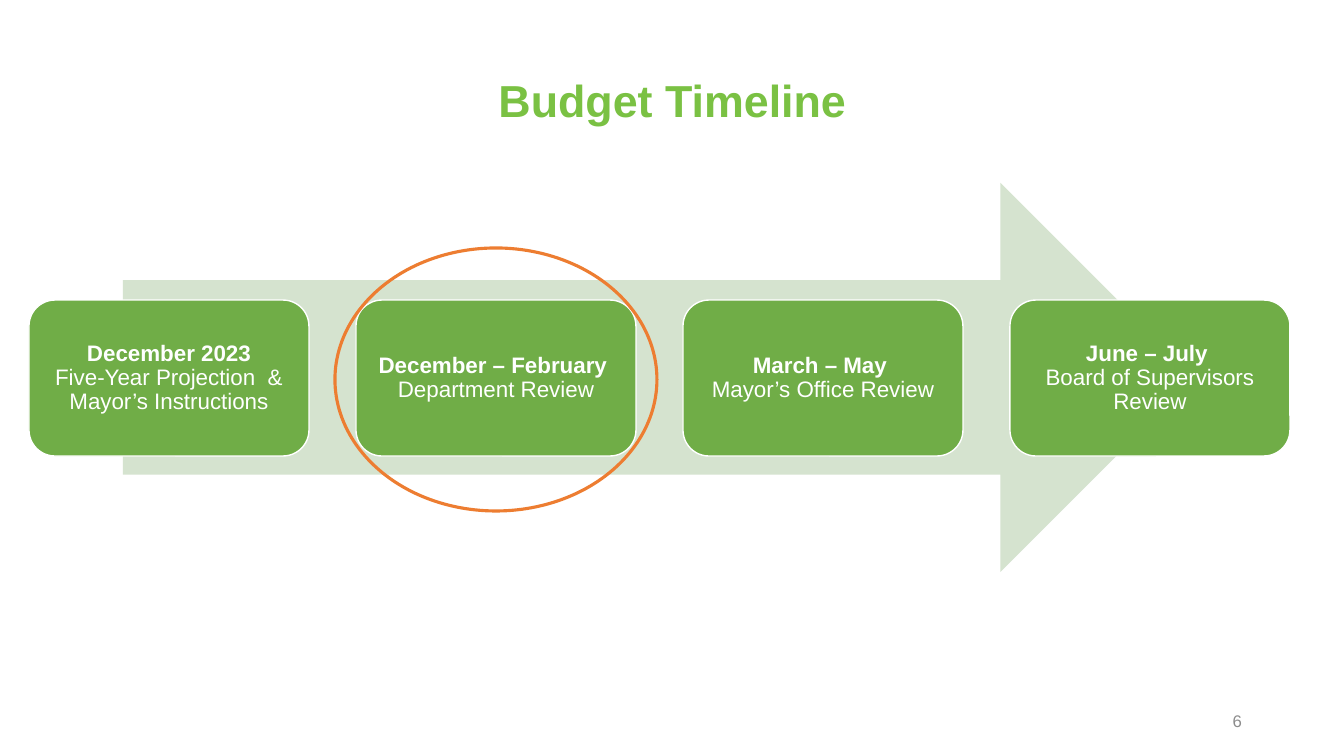
from pptx import Presentation
from pptx import util as u
from pptx.dml.color import RGBColor
from pptx.enum import shapes, text

# Content
TITLE = "Budget Timeline"
PAGE_NUMBER = "6"
STAGES = [
    ("December 2023", "Five-Year Projection  & Mayor’s Instructions"),
    ("December – February ", "Department Review"),
    ("March – May ", "Mayor’s Office Review"),
    ("June – July ", "Board of Supervisors Review"),
]
CURRENT_STAGE = 1

# Colours and font
TITLE_GREEN = RGBColor(0x7A, 0xC1, 0x43)
ARROW_GREEN = RGBColor(0xD5, 0xE3, 0xCF)
STAGE_GREEN = RGBColor(0x70, 0xAD, 0x47)
ORANGE = RGBColor(0xED, 0x7D, 0x31)
GREY = RGBColor(0x8C, 0x8C, 0x8C)
WHITE = RGBColor(0xFF, 0xFF, 0xFF)
FONT = "Arial"

# Layout in px
SLIDE_WIDTH, SLIDE_HEIGHT = 1344, 756
STAGE_LEFT, STAGE_TOP, STAGE_WIDTH, STAGE_HEIGHT = 29, 300, 280, 156
STAGE_PITCH = 327
STAGE_INSET = 15
RING_WIDTH, RING_HEIGHT, RING_TOP = 322, 263, 248


def px(length):
    return u.Emu(round(length * 914400 / 100.8))


def box(left, top, width, height):
    return px(left), px(top), px(width), px(height)


def style_font(font, size, color, bold=False):
    font.name, font.size, font.bold = FONT, u.Pt(size), bold
    font.color.rgb = color


def add_label(slide, place, label, size, color, alignment, bold=False):
    text_frame = slide.shapes.add_textbox(*place).text_frame
    text_frame.word_wrap = True
    text_frame.vertical_anchor = text.MSO_ANCHOR.MIDDLE
    text_frame.text = label
    paragraph = text_frame.paragraphs[0]
    paragraph.alignment = alignment
    style_font(paragraph.runs[0].font, size, color, bold)
    return paragraph


def add_shape(slide, kind, place, fill=None, line=None, line_width=1):
    shape = slide.shapes.add_shape(kind, *place)
    shape.shadow.inherit = False
    if fill is None:
        shape.fill.background()
    else:
        shape.fill.solid()
        shape.fill.fore_color.rgb = fill
    if line is None:
        shape.line.fill.background()
    else:
        shape.line.color.rgb = line
        shape.line.width = u.Pt(line_width)
    return shape


def add_stage(slide, left, period, task):
    shape = add_shape(slide, shapes.MSO_SHAPE.ROUNDED_RECTANGLE,
                      box(left, STAGE_TOP, STAGE_WIDTH, STAGE_HEIGHT), STAGE_GREEN, WHITE)
    text_frame = shape.text_frame
    text_frame.word_wrap = True
    text_frame.vertical_anchor = text.MSO_ANCHOR.MIDDLE
    text_frame.margin_left = text_frame.margin_right = px(STAGE_INSET)
    text_frame.margin_top = text_frame.margin_bottom = px(STAGE_INSET)
    paragraph = text_frame.paragraphs[0]
    paragraph.text = f"{period}\v{task}"
    paragraph.alignment = text.PP_ALIGN.CENTER
    paragraph.line_spacing = 0.9
    style_font(paragraph.font, 16, WHITE)
    for run, bold in zip(paragraph.runs, (True, False)):
        style_font(run.font, 16, WHITE, bold)


def main():
    presentation = Presentation()
    presentation.slide_width, presentation.slide_height = px(SLIDE_WIDTH), px(SLIDE_HEIGHT)
    slide = presentation.slides.add_slide(presentation.slide_layouts[6])

    # Title and page number
    title = add_label(slide, box(93, 30, 1159, 146), TITLE, 32, TITLE_GREEN,
                      text.PP_ALIGN.CENTER, bold=True)
    title.line_spacing = 0.9
    add_label(slide, box(950, 701, 302, 40), PAGE_NUMBER, 12, GREY, text.PP_ALIGN.RIGHT)

    # Arrow behind the stages
    add_shape(slide, shapes.MSO_SHAPE.RIGHT_ARROW, box(123, 183, 1072, 389), ARROW_GREEN)

    # Stages at an equal pitch
    for index, (period, task) in enumerate(STAGES):
        add_stage(slide, STAGE_LEFT + index * STAGE_PITCH, period, task)

    # Ring around the current stage
    ring_left = STAGE_LEFT + CURRENT_STAGE * STAGE_PITCH + (STAGE_WIDTH - RING_WIDTH) / 2
    add_shape(slide, shapes.MSO_SHAPE.OVAL,
              box(ring_left, RING_TOP, RING_WIDTH, RING_HEIGHT),
              line=ORANGE, line_width=2.25)

    presentation.save("out.pptx")


if __name__ == "__main__":
    main()
